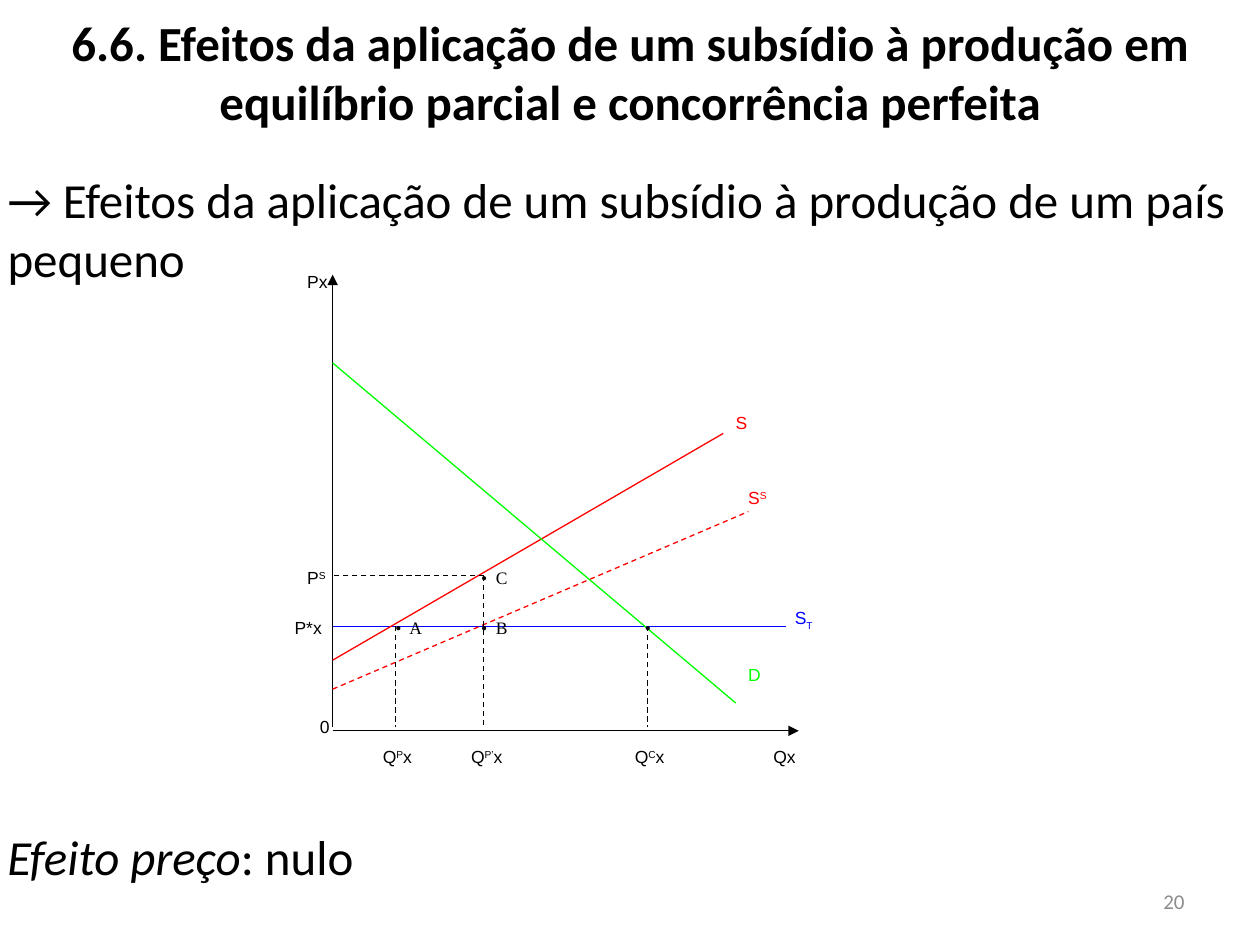
from lxml import etree
from pptx import Presentation
from pptx.dml.color import RGBColor
from pptx.enum.dml import MSO_LINE
from pptx.enum.shapes import MSO_CONNECTOR
from pptx.enum.text import MSO_ANCHOR, MSO_AUTO_SIZE, PP_ALIGN
from pptx.oxml.ns import qn
from pptx.util import Inches, Pt

COLORS = {"black": "000000", "gray": "8C8C8C", "red": "FF0000",
          "green": "00FF00", "blue": "0000FF"}

# Content
TITLE = ("6.6. Efeitos da aplicação de um subsídio à produção em "
         "equilíbrio parcial e concorrência perfeita")
LEAD = "→ Efeitos da aplicação de um subsídio à produção de um país pequeno"
EFFECT = [("Efeito preço", {"italic": True}), (": nulo", {})]
PAGE = "20"

# Diagram levels: vertical axis, base of the guides, prices and quantities
AXIS_X, AXIS_Y, BASE = 2.64, 5.8, 5.77
PRICE, PRICE_S = 4.97, 4.57
Q_P, Q_P2, Q_C = 3.14, 3.84, 5.14

# Lines: start, end, colour, dashed, arrowhead
LINES = [
    ((AXIS_X, BASE), (AXIS_X, 2.18), "black", False, True),
    ((AXIS_X, AXIS_Y), (6.34, AXIS_Y), "black", False, True),
    ((AXIS_X, PRICE), (6.24, PRICE), "blue", False, False),
    ((AXIS_X, 5.24), (5.74, 3.44), "red", False, False),
    ((AXIS_X, 5.47), (5.94, 4.06), "red", True, False),
    ((AXIS_X, 2.88), (5.84, 5.58), "green", False, False),
    ((Q_C, PRICE), (Q_C, BASE), "black", True, False),
    ((Q_P2, PRICE_S), (Q_P2, BASE), "black", True, False),
    ((Q_P, PRICE), (Q_P, BASE), "black", True, False),
    ((Q_P2, PRICE_S), (AXIS_X, PRICE_S), "black", True, False),
]

# Labels: left, top, colour, (text, baseline shift in %) runs
PRICE_TOP, PRICE_S_TOP, QTY_TOP = PRICE - 0.12, PRICE_S - 0.12, 5.87
LABELS = [
    (2.34, 2.1, "black", [("Px", 0)]),
    (2.34, PRICE_S_TOP, "black", [("P", 0), ("S", 30)]),
    (2.24, PRICE_TOP, "black", [("P*x", 0)]),
    (2.44, 5.63, "black", [("0", 0)]),
    (Q_P - 0.2, QTY_TOP, "black", [("Q", 0), ("P", 30), ("x", 0)]),
    (Q_P2 - 0.2, QTY_TOP, "black", [("Q", 0), ("P’", 30), ("x", 0)]),
    (Q_C - 0.2, QTY_TOP, "black", [("Q", 0), ("C", 30), ("x", 0)]),
    (6.04, QTY_TOP, "black", [("Qx", 0)]),
    (5.74, 3.22, "red", [("S", 0)]),
    (5.84, 3.82, "red", [("S", 0), ("S", 30)]),
    (6.21, 4.77, "blue", [("S", 0), ("T", -30)]),
    (5.84, 5.22, "green", [("D", 0)]),
]

# Marked points: left, top, text
POINTS = [
    (3.04, PRICE_TOP, "•  A"),
    (3.72, PRICE_S_TOP, "•  C"),
    (3.72, PRICE_TOP, "•  B"),
    (5.02, PRICE_TOP, "•"),
]


def place(sp, left, top, width, height):
    box = {"left": left, "top": top, "width": width, "height": height}
    for name, value in box.items():
        setattr(sp, name, Inches(value))


def write(sp, runs, size, font="Calibri", color="black",
          align=PP_ALIGN.LEFT, anchor=MSO_ANCHOR.TOP):
    """Fill a shape with one paragraph of (text, font formats) runs."""
    tf = sp.text_frame
    frame = {"word_wrap": True, "auto_size": MSO_AUTO_SIZE.NONE,
             "vertical_anchor": anchor}
    for name, value in frame.items():
        setattr(tf, name, value)
    p = tf.paragraphs[0]
    p.alignment, p.space_before = align, Pt(0)
    for text, extra in runs:
        r = p.add_run()
        r.text = text
        formats = {"size": Pt(size), "name": font, **extra}
        for name, value in formats.items():
            setattr(r.font, name, value)
        r.font.color.rgb = RGBColor.from_string(COLORS[color])
    return p


def add_text(slide, box, runs, size, **style):
    sp = slide.shapes.add_textbox(*map(Inches, box))
    return write(sp, runs, size, **style)


def add_line(slide, start, end, color, dashed, arrow):
    line = slide.shapes.add_connector(
        MSO_CONNECTOR.STRAIGHT, *map(Inches, start + end))
    line.line.width = Pt(0.75)
    line.line.color.rgb = RGBColor.from_string(COLORS[color])
    if dashed:
        line.line.dash_style = MSO_LINE.DASH
    if arrow:
        etree.SubElement(line.line._get_or_add_ln(), qn("a:tailEnd"),
                         type="triangle")
    etree.SubElement(line._element.spPr, qn("a:effectLst"))


def main():
    prs = Presentation()
    prs.slide_width, prs.slide_height = Inches(10), Inches(7.5)
    slide = prs.slides.add_slide(prs.slide_layouts[1])

    # Title and lead sentence
    title, body = slide.placeholders
    place(title, 0, 0.05, 10, 1.04)
    write(title, [(TITLE, {"bold": True})], 28, align=PP_ALIGN.CENTER)
    place(body, -0.04, 1.29, 10, 1.04)
    p = write(body, [(LEAD, {})], 28, anchor=MSO_ANCHOR.MIDDLE)
    pPr = p._p.get_or_add_pPr()
    for name in ("marL", "indent"):
        pPr.set(name, "0")
    etree.SubElement(pPr, qn("a:buNone"))

    # Conclusion and slide number
    add_text(slide, (-0.04, 6.51, 10, 0.57), EFFECT, 28,
             anchor=MSO_ANCHOR.MIDDLE)
    add_text(slide, (7.17, 6.95, 2.33, 0.4), [(PAGE, {})], 12, color="gray",
             align=PP_ALIGN.RIGHT, anchor=MSO_ANCHOR.MIDDLE)

    # Axes, curves and guides
    for line in LINES:
        add_line(slide, *line)

    # Marked points
    for left, top, text in POINTS:
        add_text(slide, (left, top, 0.6, 0.4), [(text, {})], 10,
                 font="Times New Roman")

    # Axis and curve labels
    for left, top, color, parts in LABELS:
        p = add_text(slide, (left, top, 0.6, 0.4),
                     [(text, {}) for text, _ in parts], 10,
                     font="Arial", color=color)
        for r, (_, shift) in zip(p.runs, parts):
            if shift:
                r._r.get_or_add_rPr().set("baseline", str(shift * 1000))

    prs.save("out.pptx")


if __name__ == "__main__":
    main()
